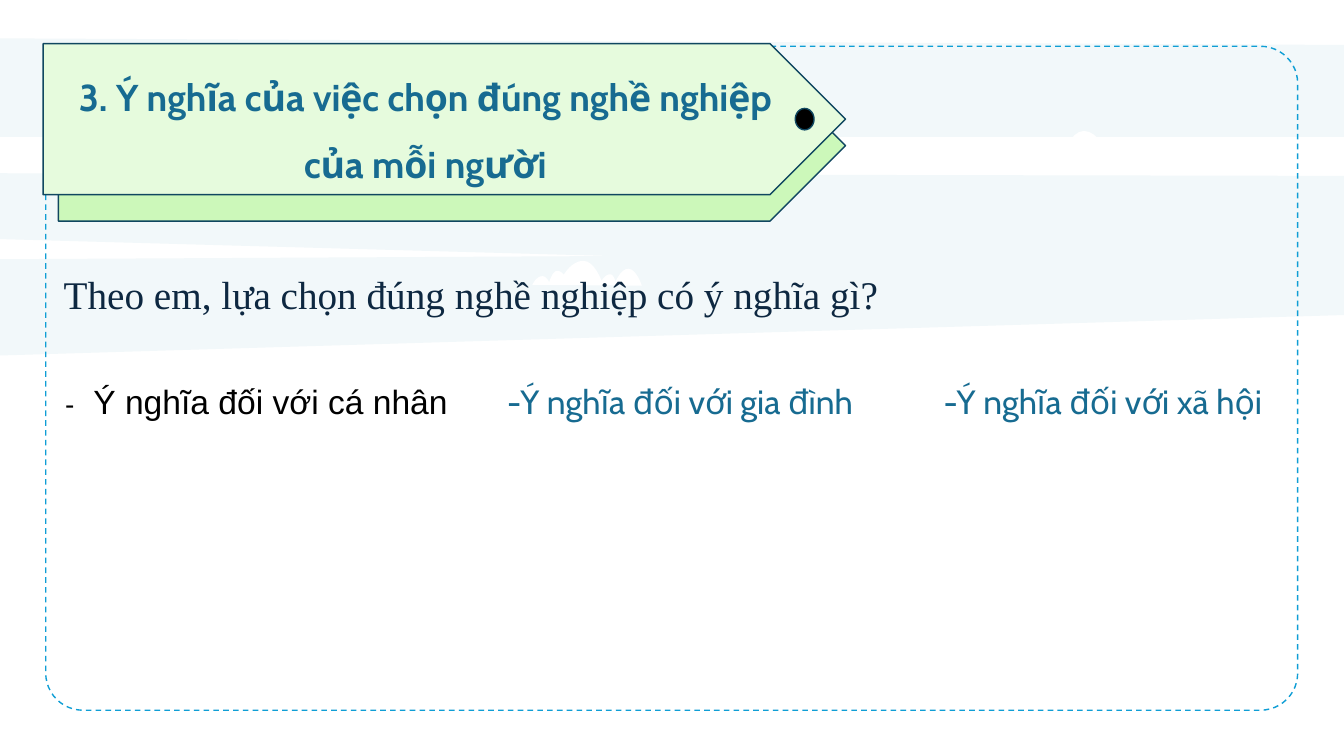
from lxml import etree
from pptx import Presentation
from pptx.dml.color import RGBColor
from pptx.enum.dml import MSO_LINE
from pptx.enum.shapes import MSO_SHAPE as SHAPE
from pptx.enum.text import MSO_ANCHOR as ANCHOR, PP_ALIGN as ALIGN
from pptx.oxml.ns import qn
from pptx.util import Cm, Pt

WHITE = RGBColor(0xFF, 0xFF, 0xFF)
BLACK = RGBColor(0x00, 0x00, 0x00)
SKY = RGBColor(0xB5, 0xD6, 0xE2)
BLUE = RGBColor(0x0F, 0x9E, 0xD5)
OUTLINE = RGBColor(0x10, 0x47, 0x60)
TEAL = RGBColor(0x17, 0x6B, 0x91)
NAVY = RGBColor(0x0E, 0x28, 0x41)
GREEN = RGBColor(0xCC, 0xF8, 0xBA)
PALE_GREEN = RGBColor(0xE6, 0xFB, 0xDD)

SLIDE_W, SLIDE_H = 50.8, 28.58

# Outlines in cm: bands on the slide, clouds as valley, peak, valley, ...
BANDS = [
    [(0, 1.45), (0, 5.18), (SLIDE_W, 5.18), (SLIDE_W, 1.7)],
    [(0, 6.55), (0, 9.04), (23.14, 9.68), (0, 9.8), (0, 13.44),
     (SLIDE_W, 11.91), (SLIDE_W, 6.65)],
]
CLOUDS = [
    (20.12, 9.86, [(0, 0.91), (0.38, 0.58), (0.64, 0.81), (0.94, 0.38),
                   (1.19, 0.53), (1.93, 0), (2.62, 0.76), (2.95, 0.51),
                   (3.15, 0.79), (3.63, 0.3), (4.14, 0.94)]),
    (38.71, 4.95, [(0, 1.27), (0.66, 0.61), (1.4, 1.02), (2.26, 0),
                   (3.18, 0.91), (3.91, 0.43), (4.42, 1.24)]),
]


def paint(sp, fill=None, line=None, width=1.5):
    sp.shadow.inherit = False
    if fill is None:
        sp.fill.background()
    else:
        sp.fill.solid()
        sp.fill.fore_color.rgb = fill
    if line is None:
        sp.line.fill.background()
    else:
        sp.line.color.rgb = line
        sp.line.width = Pt(width)


def add_preset(shapes, kind, x, y, w, h, fill=None, line=None):
    sp = shapes.add_shape(kind, Cm(x), Cm(y), Cm(w), Cm(h))
    paint(sp, fill, line)
    return sp


def add_outline(shapes, points, fill):
    start, *rest = [(Cm(x), Cm(y)) for x, y in points]
    builder = shapes.build_freeform(*start)
    builder.add_line_segments(rest, close=True)
    sp = builder.convert_to_shape()
    paint(sp, fill)
    return sp


def add_run(p, text, color, **formats):
    r = p.add_run()
    r.text = text
    r.font.color.rgb = color
    for name, value in formats.items():
        setattr(r.font, name, value)


def add_text(shapes, x, y, w, h):
    box = shapes.add_textbox(Cm(x), Cm(y), Cm(w), Cm(h))
    box.text_frame.word_wrap = True
    return box.text_frame.paragraphs[0]


def slope(start, end, peak_first, steps=8):
    """Points of a cubic curve that is level at the peak and pointed at the valley."""
    peak, valley = (start, end) if peak_first else (end, start)
    level = (peak[0] + 0.6 * (valley[0] - peak[0]), peak[1])
    c1, c2 = (level, valley) if peak_first else (valley, level)
    for i in range(1, steps + 1):
        t = i / steps
        u = 1 - t
        yield tuple(u**3 * a + 3 * u * u * t * b + 3 * u * t * t * c + t**3 * d
                    for a, b, c, d in zip(start, c1, c2, end))


def draw_cloud(shapes, x, y, knots):
    points = [knots[0]]
    for i, (start, end) in enumerate(zip(knots, knots[1:])):
        points += slope(start, end, peak_first=i % 2 == 1)
    add_outline(shapes, [(x + px, y + py) for px, py in points], WHITE)


def draw_sky(shapes):
    for points in BANDS:
        sp = add_outline(shapes, points, SKY)
        color = sp.fill._xPr.find(qn("a:solidFill"))[0]
        etree.SubElement(color, qn("a:alpha"), val="17000")
    for x, y, knots in CLOUDS:
        draw_cloud(shapes, x, y, knots)


def draw_frame(shapes, x, y, w, h):
    sp = add_preset(shapes, SHAPE.ROUNDED_RECTANGLE, x, y, w, h, line=BLUE)
    sp.adjustments[0] = 0.056
    sp.line.dash_style = MSO_LINE.DASH


def draw_title_tag(shapes, x, y, w, h):
    group = shapes.add_group_shape().shapes
    dx, dy = 0.58, 1.0
    plate_h = h - dy
    # Back plate, front plate and punched hole
    add_preset(group, SHAPE.PENTAGON, x + dx, y + dy, w - dx, plate_h, GREEN, OUTLINE)
    front = add_preset(group, SHAPE.PENTAGON, x, y, w, plate_h, PALE_GREEN, OUTLINE)
    add_preset(group, SHAPE.OVAL, x + w - 1.9, y + 2.45, 0.71, 0.81, BLACK, OUTLINE)
    tf = front.text_frame
    tf.word_wrap = True
    tf.vertical_anchor = ANCHOR.MIDDLE
    p = tf.paragraphs[0]
    p.alignment = ALIGN.CENTER
    p.line_spacing = 1.5
    add_run(p, "3. Ý nghĩa của việc chọn đúng nghề nghiệp của mỗi người", TEAL,
            name="Cabin", size=Pt(40), bold=True)


def draw_question(shapes, x, y, w, h):
    p = add_text(shapes, x, y, w, h)
    add_run(p, "Theo em, lựa chọn đúng nghề nghiệp có ý nghĩa gì?", NAVY,
            name="Times New Roman", size=Pt(42))


def draw_meanings(shapes, x, y, w, h):
    # Personal meaning: dash, then text at a tab stop
    p = add_text(shapes, x, y, 16.66, h)
    tabs = etree.SubElement(p._p.get_or_add_pPr(), qn("a:tabLst"))
    etree.SubElement(tabs, qn("a:tab"), pos=str(Cm(1.07)), algn="l")
    add_run(p, "-", BLACK, name="Arial", size=Pt(30))
    add_run(p, "\tÝ nghĩa đối với cá nhân", BLACK, name="Arial", size=Pt(36))
    # Family and society
    for left, width, text in [
        (16.71, 19.2, "-Ý nghĩa đối với gia đình"),
        (32.92, w - 32.92, " -Ý nghĩa đối với xã hội"),
    ]:
        p = add_text(shapes, x + left, y, width, h)
        add_run(p, text, TEAL, name="Cabin", size=Pt(36))


def main():
    prs = Presentation()
    prs.slide_width, prs.slide_height = Cm(SLIDE_W), Cm(SLIDE_H)
    shapes = prs.slides.add_slide(prs.slide_layouts[6]).shapes
    draw_sky(shapes)
    draw_frame(shapes, 1.73, 1.75, 47.32, 25.1)
    draw_title_tag(shapes, 1.63, 1.65, 30.33, 6.71)
    draw_question(shapes, 2.16, 10.11, 39.32, 2.44)
    draw_meanings(shapes, 2.21, 14.27, 47.65, 2.72)
    prs.save("out.pptx")


if __name__ == "__main__":
    main()
